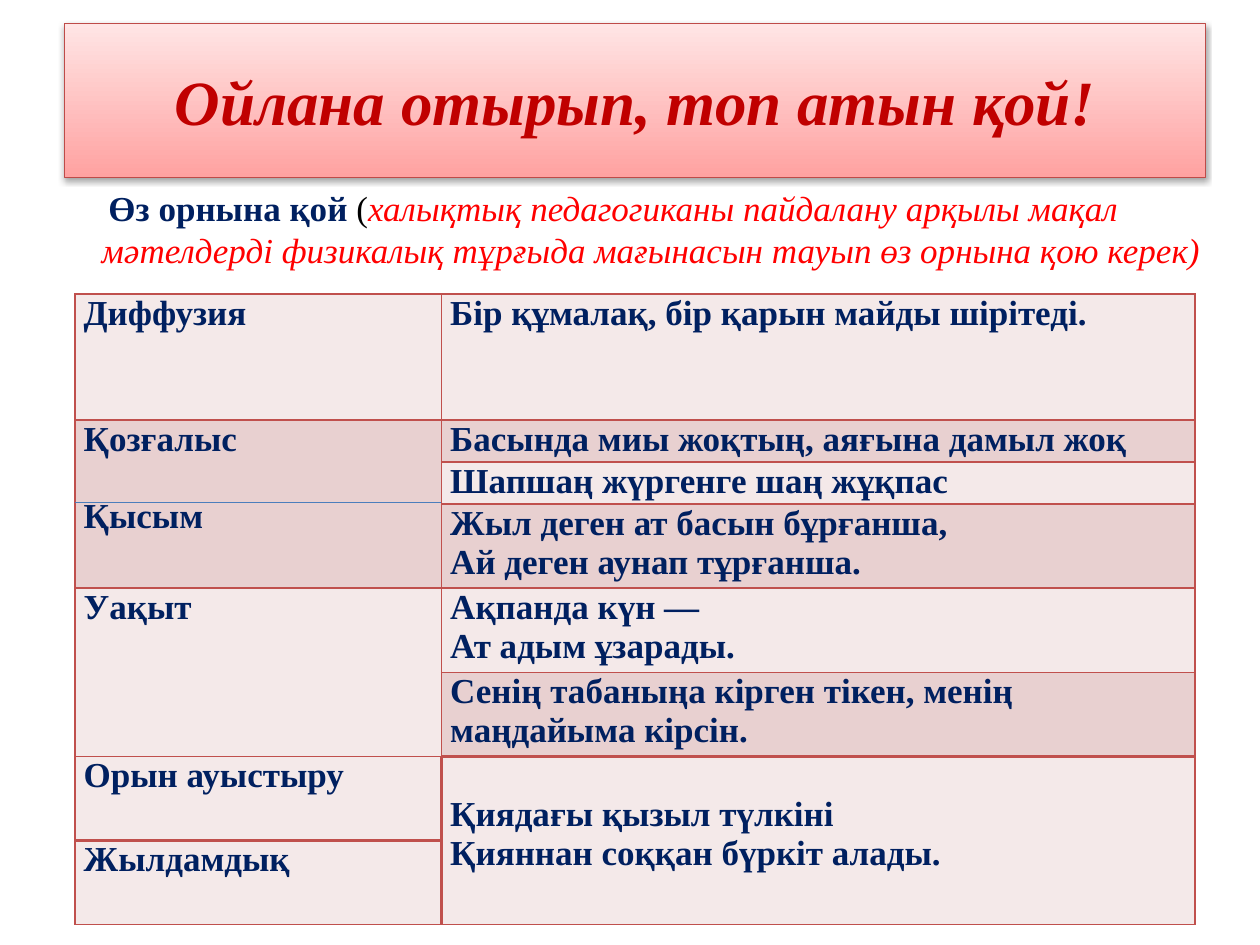
from lxml import etree
from pptx import Presentation
from pptx.dml.color import RGBColor
from pptx.enum.shapes import MSO_CONNECTOR, MSO_SHAPE
from pptx.enum.text import MSO_ANCHOR, PP_ALIGN
from pptx.oxml import parse_xml
from pptx.oxml.ns import nsdecls, qn
from pptx.util import Pt

RECTANGLE = MSO_SHAPE.RECTANGLE
STRAIGHT = MSO_CONNECTOR.STRAIGHT
MIDDLE = MSO_ANCHOR.MIDDLE
CENTER = PP_ALIGN.CENTER

NAVY = RGBColor(0x00, 0x20, 0x60)
DARK_RED = RGBColor(0xC0, 0x00, 0x00)
RED = RGBColor(0xFF, 0x00, 0x00)
BLACK = RGBColor(0x00, 0x00, 0x00)
BORDER = RGBColor(0xC0, 0x50, 0x4D)
TITLE_LINE = RGBColor(0xBE, 0x4B, 0x48)
TITLE_TOP = RGBColor(0xFF, 0xE5, 0xE5)
TITLE_BOTTOM = RGBColor(0xFF, 0xA2, 0xA1)
BLUE = RGBColor(0x4B, 0x7E, 0xBC)
LIGHT = RGBColor(0xF4, 0xE9, 0xE9)
DARK = RGBColor(0xE8, 0xD0, 0xD0)

SERIF = "Times New Roman"
TITLE = "Ойлана отырып, топ атын қой!"
TASK = [
    (" ", dict(size=14, font="Arial", color=BLACK, bold=True)),
    ("Өз орнына қой ", dict(bold=True)),
    ("(", dict(color=BLACK)),
    ("халықтық педагогиканы пайдалану арқылы мақал мәтелдерді физикалық "
     "тұрғыда мағынасын тауып өз орнына қою керек)", dict(color=RED, italic=True)),
]

# first row, rows covered, paragraphs, fill
TERMS = [
    (0, 1, ["Диффузия"], LIGHT),
    (1, 3, ["Қозғалыс", "Қысым"], DARK),
    (4, 2, ["Уақыт"], LIGHT),
    (6, 1, ["Орын ауыстыру"], LIGHT),
    (7, 1, ["Жылдамдық"], LIGHT),
]
PROVERBS = [
    (0, 1, ["Бір құмалақ, бір қарын майды шірітеді."], LIGHT),
    (1, 1, ["Басында миы жоқтың, аяғына дамыл жоқ"], DARK),
    (2, 1, ["Шапшаң жүргенге шаң жұқпас"], LIGHT),
    (3, 1, ["Жыл деген ат басын бұрғанша,\vАй деген аунап тұрғанша."], DARK),
    (4, 1, ["Ақпанда күн —\vАт адым ұзарады."], LIGHT),
    (5, 1, ["Сенің табаныңа кірген тікен, менің маңдайыма кірсін."], DARK),
    (6, 2, ["Қиядағы қызыл түлкіні\vҚияннан соққан бүркіт алады."], LIGHT),
]
COLUMNS = [209.5, 430.5]
ROWS = [72, 24, 24] + [48] * 5
TABLE_LEFT, TABLE_TOP = 42.8, 168
LINE_GAP = 22
HEAVY = {(5, 1): "B", (6, 0): "RB", (6, 1): "LT", (7, 0): "T", (7, 1): "L"}


def add_text(para, text, size=20, font=SERIF, color=NAVY, bold=False, italic=False):
    for index, piece in enumerate(text.split("\v")):
        if index:
            para.add_line_break()
        span = para.add_run()
        span.text = piece
        span.font.size = Pt(size)
        span.font.name = font
        span.font.color.rgb = color
        span.font.bold = bold
        span.font.italic = italic


def set_borders(cell, heavy):
    properties = cell._tc.get_or_add_tcPr()
    for index, side in enumerate("LRTB"):
        width = Pt(2 if side in heavy else 1)
        properties.insert(index, parse_xml(
            f'<a:ln{side} {nsdecls("a")} w="{width}"><a:solidFill>'
            f'<a:srgbClr val="{BORDER}"/></a:solidFill></a:ln{side}>'))


def add_title(page):
    box = page.shapes.add_shape(RECTANGLE, Pt(36.7), Pt(13.5), Pt(652.3), Pt(88))
    box.fill.gradient()
    box.fill.gradient_angle = 270
    for stop, color in zip(box.fill.gradient_stops, (TITLE_TOP, TITLE_BOTTOM)):
        stop.color.rgb = color
    box.line.color.rgb = TITLE_LINE
    box.line.width = Pt(0.75)
    box._element.spPr.append(parse_xml(
        f'<a:effectLst {nsdecls("a")}><a:outerShdw blurRad="{Pt(3)}" dist="{Pt(1.8)}" '
        'dir="5400000" rotWithShape="0"><a:srgbClr val="000000">'
        '<a:alpha val="35000"/></a:srgbClr></a:outerShdw></a:effectLst>'))
    box.text_frame.vertical_anchor = MIDDLE
    para = box.text_frame.paragraphs[0]
    para.alignment = CENTER
    add_text(para, TITLE, size=36, color=DARK_RED, bold=True, italic=True)


def add_task(page):
    box = page.shapes.add_textbox(Pt(51), Pt(102), Pt(658), Pt(78))
    frame = box.text_frame
    frame.word_wrap = True
    frame.vertical_anchor = MIDDLE
    frame.margin_bottom = Pt(24)
    for text, style in TASK:
        add_text(frame.paragraphs[0], text, **style)


def add_proverb_table(page):
    table = page.shapes.add_table(
        len(ROWS), len(COLUMNS), Pt(TABLE_LEFT), Pt(TABLE_TOP),
        Pt(sum(COLUMNS)), Pt(sum(ROWS))).table
    for column, width in zip(table.columns, COLUMNS):
        column.width = Pt(width)
    for row, height in zip(table.rows, ROWS):
        row.height = Pt(height)
    for column, entries in enumerate((TERMS, PROVERBS)):
        for first, count, paragraphs, color in entries:
            for row in range(first, first + count):
                cell = table.cell(row, column)
                cell.fill.solid()
                cell.fill.fore_color.rgb = color
                set_borders(cell, HEAVY.get((row, column), ""))
            cell = table.cell(first, column)
            if count > 1:
                cell.merge(table.cell(first + count - 1, column))
            cell.margin_left = cell.margin_right = Pt(5)
            cell.margin_top = Pt(LINE_GAP if column and count > 1 else 0)
            cell.margin_bottom = Pt(0)
            for index, text in enumerate(paragraphs):
                para = cell.text_frame.paragraphs[0]
                if index:
                    para = cell.text_frame.add_paragraph()
                    para.space_before = Pt(LINE_GAP)
                add_text(para, text, bold=True)


def add_divider(page):
    height = Pt(287.3)
    divider = page.shapes.add_connector(
        STRAIGHT, Pt(TABLE_LEFT), height, Pt(TABLE_LEFT + COLUMNS[0]), height)
    divider.line.color.rgb = BLUE
    divider.line.width = Pt(0.75)
    etree.SubElement(divider._element.spPr, qn("a:effectLst"))


def main():
    deck = Presentation()
    deck.slide_width, deck.slide_height = Pt(720), Pt(540)
    page = deck.slides.add_slide(deck.slide_layouts[6])
    add_title(page)
    add_task(page)
    add_proverb_table(page)
    add_divider(page)
    deck.save("out.pptx")


if __name__ == "__main__":
    main()
